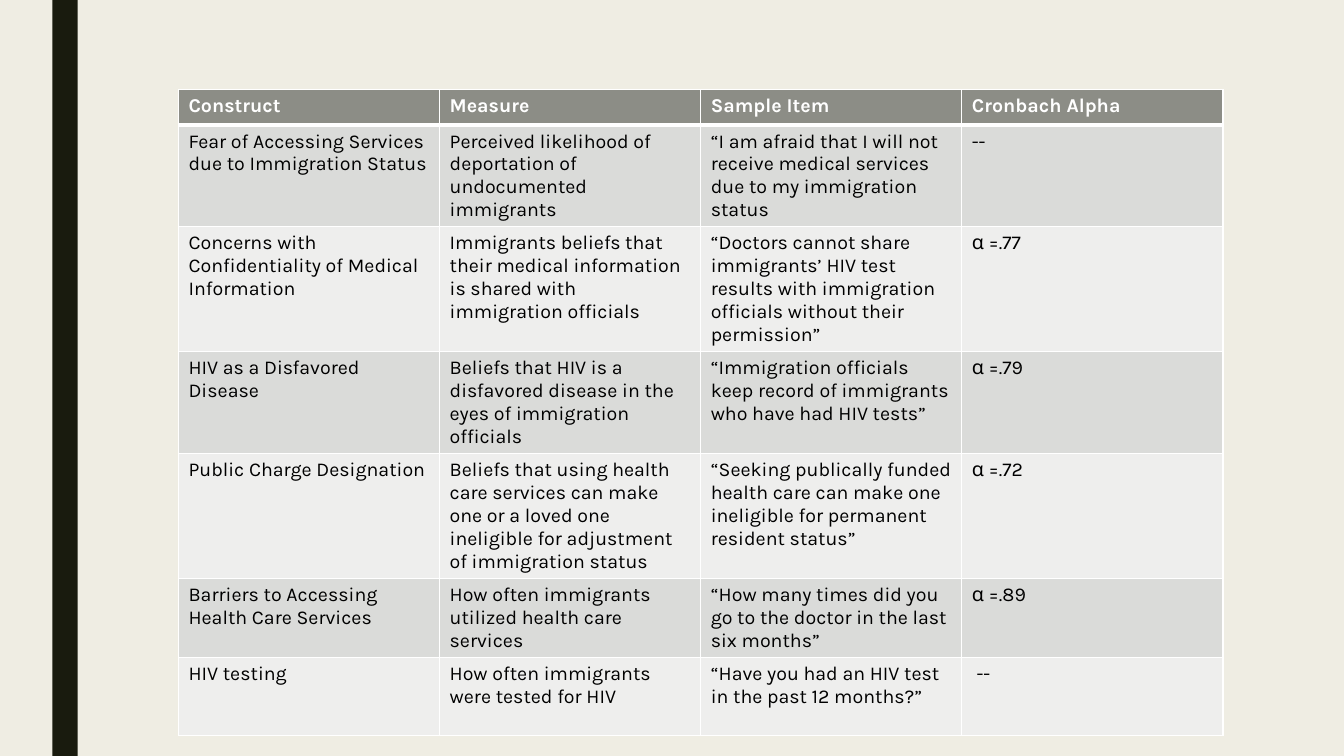
from lxml import etree
from pptx import Presentation
from pptx.dml.color import RGBColor
from pptx.enum.shapes import MSO_SHAPE as Shape
from pptx.oxml.ns import qn
from pptx.util import Inches, Pt

# Content
HEADER = ("Construct", "Measure", "Sample Item", "Cronbach Alpha")
MEASURES = [
    ("Fear of Accessing Services due to Immigration Status",
     "Perceived likelihood of deportation of undocumented immigrants",
     "“I am afraid that I will not receive medical services due to my immigration status",
     "--"),
    ("Concerns with Confidentiality of Medical Information",
     "Immigrants beliefs that their medical information is shared with immigration officials",
     "“Doctors cannot share immigrants’ HIV test results with immigration officials "
     "without their permission”",
     "α =.77"),
    ("HIV as a Disfavored Disease",
     "Beliefs that HIV is a disfavored disease in the eyes of immigration officials",
     "“Immigration officials keep record of immigrants who have had HIV tests”",
     "α =.79"),
    ("Public Charge Designation",
     "Beliefs that using health care services can make one or a loved one ineligible "
     "for adjustment of immigration status",
     "“Seeking publically funded health care can make one ineligible for permanent "
     "resident status”",
     "α =.72"),
    ("Barriers to Accessing Health Care Services",
     "How often immigrants utilized health care services",
     "“How many times did you go to the doctor in the last six months”",
     "α =.89"),
    ("HIV testing",
     "How often immigrants were tested for HIV",
     "“Have you had an HIV test in the past 12 months?”",
     " --"),
]
ROW_HEIGHTS = (0.35, 1.01, 1.24, 1.01, 1.24, 0.78, 0.78)
COLUMN_WIDTH = 2.59
TABLE_LEFT, TABLE_TOP = 1.77, 0.89

THEME = {
    "background": "EFEDE3",
    "bar": "191B0E",
    "header": "8C8D86",
    "bands": ("DADBD9", "EEEEED"),
    "border": "FFFFFF",
    "header_font": {"name": "Karla", "size": Pt(14), "bold": True},
    "body_font": {"name": "Karla", "size": Pt(14), "bold": False},
    "header_text": "FFFFFF",
    "body_text": "000000",
}


def color(name):
    return RGBColor.from_string(name)


def paint(fill, name):
    fill.solid()
    fill.fore_color.rgb = color(name)


def add_borders(cell, widths):
    properties = cell._tc.get_or_add_tcPr()
    for side, width in widths.items():
        line = etree.SubElement(properties, qn(f"a:ln{side}"), w=str(Pt(width)))
        solid = etree.SubElement(line, qn("a:solidFill"))
        etree.SubElement(solid, qn("a:srgbClr"), val=THEME["border"])


def fill_cell(cell, text, row):
    is_header = row == 0
    # Borders go before the fill in the cell properties
    add_borders(cell, {"L": 1, "R": 1, "T": 3 if row == 1 else 1, "B": 3 if is_header else 1})
    paint(cell.fill, THEME["header"] if is_header else THEME["bands"][(row - 1) % 2])
    para = cell.text_frame.paragraphs[0]
    span = para.add_run()
    span.text = text
    kind = "header" if is_header else "body"
    for key, value in THEME[f"{kind}_font"].items():
        setattr(span.font, key, value)
    span.font.color.rgb = color(THEME[f"{kind}_text"])


def main():
    deck = Presentation()
    deck.slide_width, deck.slide_height = Inches(13.33), Inches(7.5)
    page = deck.slides.add_slide(deck.slide_layouts[6])
    paint(page.background.fill, THEME["background"])

    # Side bar
    bar = page.shapes.add_shape(Shape.RECTANGLE, Inches(0.52), 0, Inches(0.25), deck.slide_height)
    bar.shadow.inherit = False
    paint(bar.fill, THEME["bar"])
    bar.line.fill.background()

    # Table of measures
    rows = [HEADER, *MEASURES]
    table = page.shapes.add_table(
        len(rows), len(HEADER), Inches(TABLE_LEFT), Inches(TABLE_TOP),
        Inches(COLUMN_WIDTH * len(HEADER)), Inches(sum(ROW_HEIGHTS))).table
    for column in table.columns:
        column.width = Inches(COLUMN_WIDTH)
    for row, (texts, height) in enumerate(zip(rows, ROW_HEIGHTS)):
        table.rows[row].height = Inches(height)
        for column, text in enumerate(texts):
            fill_cell(table.cell(row, column), text, row)

    deck.save("out.pptx")


if __name__ == "__main__":
    main()
